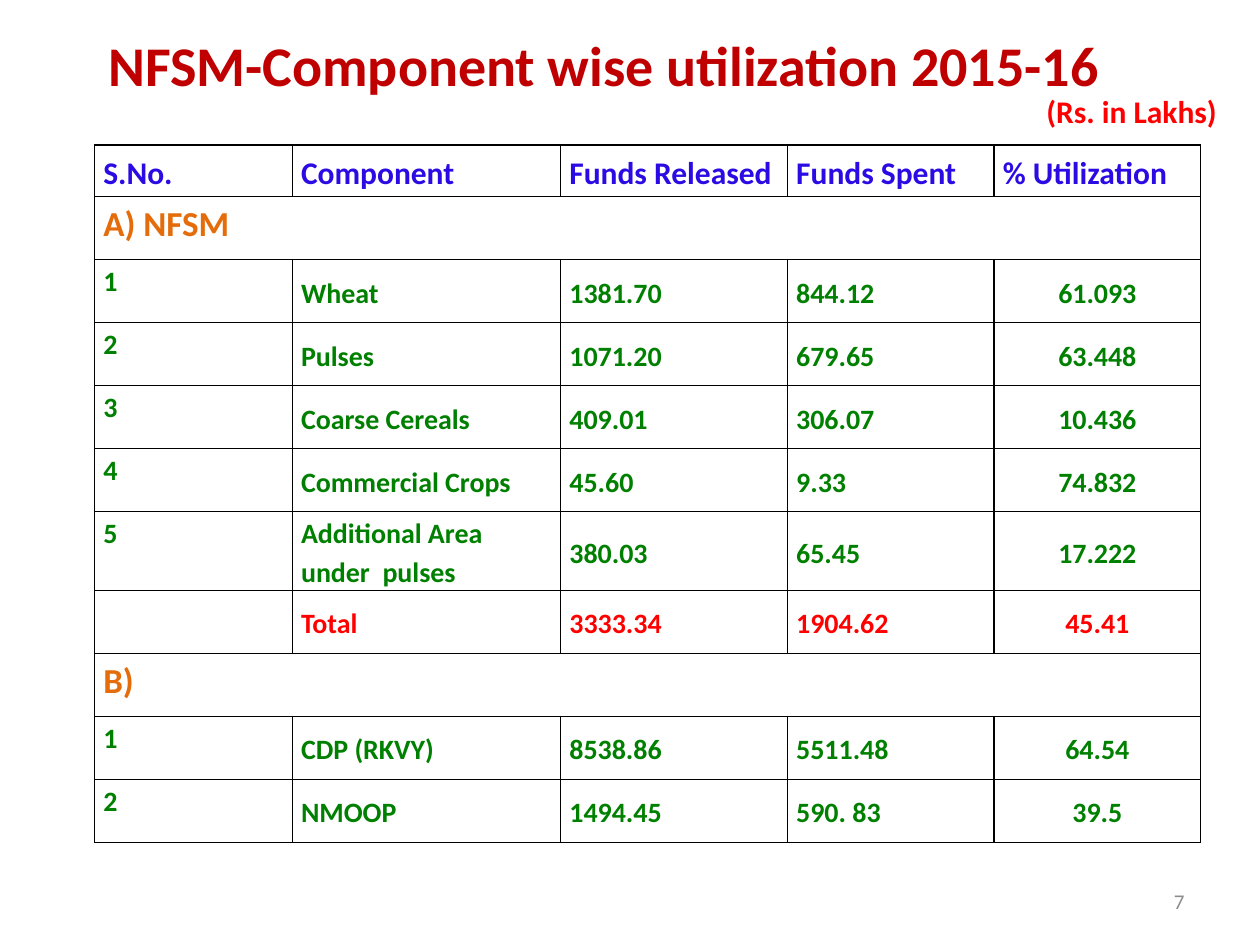
from lxml import etree
from pptx import Presentation
from pptx.dml.color import RGBColor
from pptx.enum.text import MSO_ANCHOR, MSO_AUTO_SIZE, PP_ALIGN
from pptx.oxml.ns import qn
from pptx.util import Inches, Pt

LEFT, CENTER, RIGHT = PP_ALIGN.LEFT, PP_ALIGN.CENTER, PP_ALIGN.RIGHT
TOP, MIDDLE = MSO_ANCHOR.TOP, MSO_ANCHOR.MIDDLE
FONT = "Calibri"
DARK_RED = RGBColor(0xC0, 0x00, 0x00)
RED = RGBColor(0xFF, 0x00, 0x00)
BLUE = RGBColor(0x2A, 0x0B, 0xE3)
ORANGE = RGBColor(0xE4, 0x6C, 0x0A)
GREEN = RGBColor(0x00, 0x80, 0x00)
GRAY = RGBColor(0x8C, 0x8C, 0x8C)
WHITE = RGBColor(0xFF, 0xFF, 0xFF)
BORDER = "000000"

# Content: a row with a single entry is a section heading
TITLE = "NFSM-Component wise utilization 2015-16 "
UNIT = "(Rs. in Lakhs)"
PAGE = "7"
ROWS = [
    ("S.No.", "Component", "Funds Released", "Funds Spent", "% Utilization"),
    ("A) NFSM",),
    ("1", "Wheat", "1381.70", "844.12", "61.093"),
    ("2", "Pulses", "1071.20", "679.65", "63.448"),
    ("3", "Coarse Cereals", "409.01", "306.07", "10.436"),
    ("4", "Commercial Crops", "45.60", "9.33", "74.832"),
    ("5", "Additional Area under  pulses", "380.03", "65.45", "17.222"),
    ("", "Total", "3333.34", "1904.62", "45.41"),
    ("B)",),
    ("1", "CDP (RKVY)", "8538.86", "5511.48", "64.54"),
    ("2", "NMOOP", "1494.45", "590. 83", "39.5"),
]
COLUMN_WIDTHS = [1.57, 2.13, 1.8, 1.64, 1.64]
ROW_HEIGHT = 0.5
SPECIAL_HEIGHTS = {0: 0.41, 6: 0.61}


def add_run(paragraph, text, size, color, bold=True):
    run = paragraph.add_run()
    run.text = text
    run.font.name = FONT
    run.font.size = Pt(size)
    run.font.bold = bold
    run.font.color.rgb = color


def add_label(slide, left, top, width, height):
    label = slide.shapes.add_textbox(Inches(left), Inches(top), Inches(width), Inches(height))
    return label.text_frame


def add_borders(cell):
    properties = cell._tc.get_or_add_tcPr()
    for position, side in enumerate(("lnL", "lnR", "lnT", "lnB")):
        line = etree.Element(qn(f"a:{side}"), w=str(Pt(1)))
        fill = etree.SubElement(line, qn("a:solidFill"))
        etree.SubElement(fill, qn("a:srgbClr"), val=BORDER)
        properties.insert(position, line)


def format_cell(cell, text, size, color, align, anchor):
    cell.fill.solid()
    cell.fill.fore_color.rgb = WHITE
    cell.margin_left = cell.margin_right = Inches(0.07)
    cell.margin_top = cell.margin_bottom = 0
    cell.vertical_anchor = anchor
    add_borders(cell)
    paragraph = cell.text_frame.paragraphs[0]
    paragraph.alignment = align
    paragraph.line_spacing = 1.15
    if text:
        add_run(paragraph, text, size, color)


def row_style(index, values):
    if index == 0:
        return 18, BLUE
    if len(values) == 1:
        return 20, ORANGE
    return 16, RED if values[1] == "Total" else GREEN


def add_utilization_table(slide):
    heights = [SPECIAL_HEIGHTS.get(i, ROW_HEIGHT) for i in range(len(ROWS))]
    table = slide.shapes.add_table(
        len(ROWS), len(COLUMN_WIDTHS), Inches(0.75), Inches(1.15),
        Inches(sum(COLUMN_WIDTHS)), Inches(sum(heights))).table
    table.first_row = table.horz_banding = False
    for column, width in zip(table.columns, COLUMN_WIDTHS):
        column.width = Inches(width)

    last = len(COLUMN_WIDTHS) - 1
    for r, values in enumerate(ROWS):
        table.rows[r].height = Inches(heights[r])
        size, color = row_style(r, values)
        if len(values) == 1:
            table.cell(r, 0).merge(table.cell(r, last))
        for c in range(last + 1):
            text = values[c] if c < len(values) else ""
            align = CENTER if c == last and r > 0 else LEFT
            anchor = TOP if c == 0 and r > 0 else MIDDLE
            format_cell(table.cell(r, c), text, size, color, align, anchor)


def main():
    prs = Presentation()
    prs.slide_width, prs.slide_height = Inches(10), Inches(7.5)
    slide = prs.slides.add_slide(prs.slide_layouts[5])

    # Title
    title = slide.shapes.title
    title.left, title.top = Inches(0.39), Inches(0.16)
    title.width, title.height = Inches(8.91), Inches(0.7)
    title.text_frame.vertical_anchor = MIDDLE
    heading = title.text_frame.paragraphs[0]
    heading.alignment = CENTER
    add_run(heading, TITLE, 32, DARK_RED)

    add_utilization_table(slide)

    # Page number
    page = add_label(slide, 7.17, 6.95, 2.33, 0.4)
    page.word_wrap = True
    page.vertical_anchor = MIDDLE
    page.paragraphs[0].alignment = RIGHT
    add_run(page.paragraphs[0], PAGE, 12, GRAY, bold=False)

    # Unit note
    unit = add_label(slide, 8.15, 0.68, 1.63, 0.4)
    unit.word_wrap = False
    unit.auto_size = MSO_AUTO_SIZE.SHAPE_TO_FIT_TEXT
    add_run(unit.paragraphs[0], " ", 18, GREEN)
    add_run(unit.paragraphs[0], UNIT, 18, RED)

    prs.save("out.pptx")


if __name__ == "__main__":
    main()
